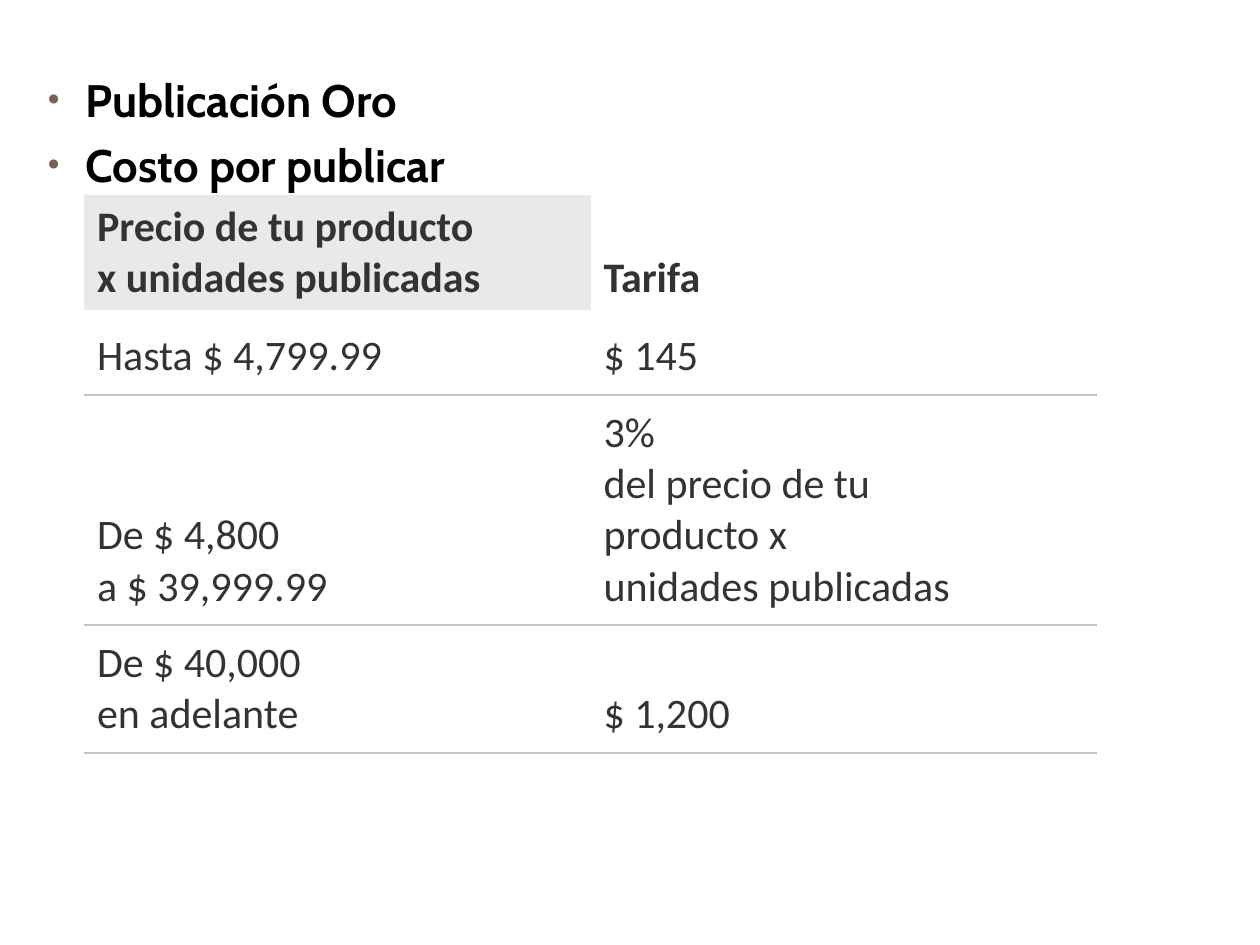
from typing import NamedTuple

from lxml import etree
from pptx import Presentation, util as u
from pptx.dml.color import RGBColor
from pptx.enum import text
from pptx.oxml import ns

BLACK = RGBColor(0x00, 0x00, 0x00)
INK = RGBColor(0x33, 0x33, 0x33)
HEADER_GREY = RGBColor(0xE9, 0xE9, 0xE9)
RULE_GREY = RGBColor(0xC2, 0xC2, 0xC2)
BULLET_BROWN = RGBColor(0x77, 0x5F, 0x55)

LEFT, TOP, COLUMN = 0.67, 1.55, 4.02
INDENT = 0.3
PLAIN_STYLE = "{2D5ABB26-0587-4C30-8999-92F81FD0307C}"


class Row(NamedTuple):
    height: float
    price: str
    fee: str


HEADINGS = ("Publicación Oro", "Costo por publicar")
ROWS = (
    Row(0.87, "Precio de tu producto\vx unidades publicadas", "Tarifa"),
    Row(0.67, "Hasta $ 4,799.99", "$ 145"),
    Row(1.56, "De $ 4,800\va $ 39,999.99",
        "3%\vdel precio de tu\vproducto x\vunidades publicadas"),
    Row(0.96, "De $ 40,000\ven adelante", "$ 1,200"),
)


def set_all(obj, values: dict) -> None:
    for name, value in values.items():
        setattr(obj, name, value)


def add_xml(parent, tag: str, **attrs: str):
    return etree.SubElement(parent, ns.qn(tag), attrs)


def write(p, words: str, color: RGBColor, **font) -> None:
    p.text = words
    for r in p.runs:
        set_all(r.font, font)
        r.font.color.rgb = color


def add_bullet(p) -> None:
    pPr = p._p.get_or_add_pPr()
    pPr.set("marL", str(u.Inches(INDENT)))
    pPr.set("indent", str(-u.Inches(INDENT)))
    add_xml(add_xml(pPr, "a:buClr"), "a:srgbClr", val=str(BULLET_BROWN))
    add_xml(pPr, "a:buSzPct", val="73000")
    add_xml(pPr, "a:buFont", typeface="Arial")
    add_xml(pPr, "a:buChar", char="•")


def add_bottom_rule(cell) -> None:
    tcPr = cell._tc.get_or_add_tcPr()
    line = etree.Element(ns.qn("a:lnB"), w=str(u.Pt(1)))
    add_xml(add_xml(line, "a:solidFill"), "a:srgbClr", val=str(RULE_GREY))
    tcPr.insert(0, line)


def fill_headings(sp) -> None:
    set_all(sp, dict(left=u.Inches(0.28), top=u.Inches(0.52),
                     width=u.Inches(COLUMN), height=u.Inches(1.2)))
    tf = sp.text_frame
    set_all(tf, dict(word_wrap=True, auto_size=text.MSO_AUTO_SIZE.NONE,
                     vertical_anchor=text.MSO_ANCHOR.TOP))
    for i, heading in enumerate(HEADINGS):
        p = tf.add_paragraph() if i else tf.paragraphs[0]
        add_bullet(p)
        p.space_before = u.Pt(6 if i else 0)
        write(p, heading, BLACK, name="Cabin", size=u.Pt(26), bold=True)


def format_cell(cell, words: str, header: bool, shaded: bool) -> None:
    side, edge = u.Inches(0.1), u.Inches(0.05 if header else 0.1)
    set_all(cell, dict(margin_left=side, margin_right=side, margin_top=edge,
                       margin_bottom=edge,
                       vertical_anchor=text.MSO_ANCHOR.BOTTOM))
    if shaded:
        cell.fill.solid()
        cell.fill.fore_color.rgb = HEADER_GREY
    else:
        cell.fill.background()
    if not header:
        add_bottom_rule(cell)
    p = cell.text_frame.paragraphs[0]
    p.space_after = u.Pt(10)
    write(p, words, INK, name="Calibri", size=u.Pt(24), bold=header)


def add_fee_table(s) -> None:
    height = sum(row.height for row in ROWS)
    table = s.shapes.add_table(len(ROWS), 2, u.Inches(LEFT), u.Inches(TOP),
                               u.Inches(2 * COLUMN), u.Inches(height)).table
    set_all(table, dict(first_row=False, horz_banding=False))
    table._tbl.tblPr.find(ns.qn("a:tableStyleId")).text = PLAIN_STYLE
    for i, row in enumerate(ROWS):
        table.rows[i].height = u.Inches(row.height)
        for j, words in enumerate((row.price, row.fee)):
            format_cell(table.cell(i, j), words, i == 0, i == j == 0)


def main() -> None:
    prs = Presentation()
    set_all(prs, dict(slide_width=u.Inches(10), slide_height=u.Inches(7.5)))
    s = prs.slides.add_slide(prs.slide_layouts[1])
    title = s.shapes.title.element
    title.getparent().remove(title)
    fill_headings(s.placeholders[1])
    add_fee_table(s)
    prs.save("out.pptx")


if __name__ == "__main__":
    main()
